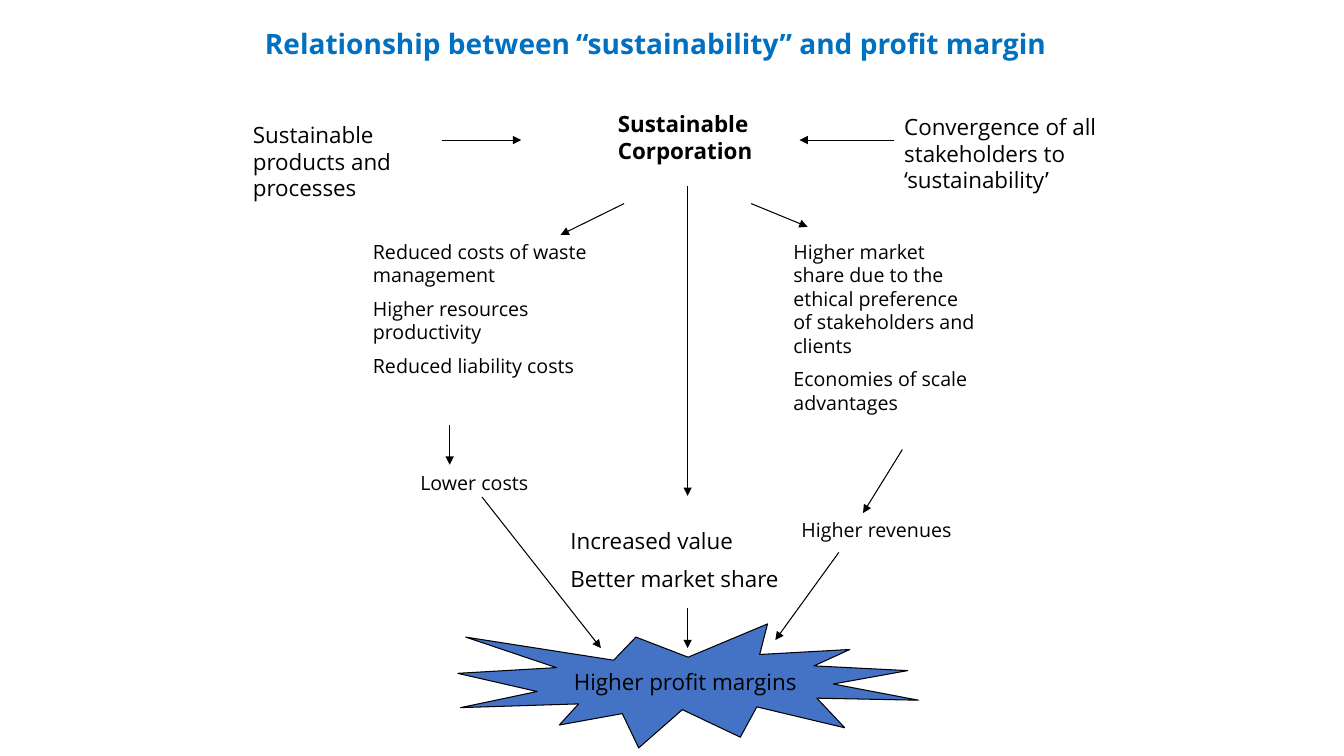
import pptx
import pptx.util
import pptx.dml.color
import pptx.enum.shapes
import pptx.enum.text
import pptx.oxml
import pptx.oxml.ns

Inches = pptx.util.Inches
Pt = pptx.util.Pt
RGBColor = pptx.dml.color.RGBColor

BLACK = RGBColor(0x00, 0x00, 0x00)
TITLE = RGBColor(0x00, 0x70, 0xC0)
BURST = RGBColor(0x44, 0x72, 0xC4)
FONT = "Open Sans"

deck = pptx.Presentation()
deck.slide_width = Inches(13.33)
deck.slide_height = Inches(7.5)
slide = deck.slides.add_slide(deck.slide_layouts[6])


def style(para, size, color=BLACK, bold=False):
    para.font.name = FONT
    para.font.size = Pt(size)
    para.font.color.rgb = color
    para.font.bold = bold


def add_text(left, top, width, height, size, lines, color=BLACK, bold=False):
    box = slide.shapes.add_textbox(
        Inches(left), Inches(top), Inches(width), Inches(height))
    frame = box.text_frame
    frame.word_wrap = True
    frame.text = "\n".join(lines)
    for para in frame.paragraphs:
        style(para, size, color, bold)
    for para in frame.paragraphs[1:]:
        para.space_before = Pt(size / 2)
    return frame


# Title, with a smaller space after its first words
title = add_text(2.53, 0.21, 9.33, 0.43, 20, ["Relationship between"], TITLE, True)
head = title.paragraphs[0]
gap = head.add_run()
gap.text = " "
gap.font.size = Pt(16)
gap.font.bold = False
head.add_run().text = "“sustainability” and profit margin"

# Text blocks: left, top, width, height, size, paragraphs
blocks = [
    (2.41, 1.15, 2.05, 0.91, 16, ["Sustainable products and processes"]),
    (8.87, 1.07, 2.6, 0.91, 16,
     ["Convergence of all stakeholders to ‘sustainability’"]),
    (3.6, 2.33, 2.6, 1.28, 14,
     ["Reduced costs of waste management",
      "Higher resources productivity",
      "Reduced liability costs"]),
    (7.77, 2.33, 2.05, 1.87, 14,
     ["Higher market share due to the ethical preference of "
      "stakeholders and clients",
      "Economies of scale advantages"]),
    (4.07, 4.62, 2.05, 0.34, 14, ["Lower costs"]),
    (7.85, 5.09, 2.05, 0.34, 14, ["Higher revenues"]),
    (5.56, 5.18, 2.52, 0.77, 16, ["Increased value", "Better market share"]),
]
for block in blocks:
    add_text(*block)
add_text(6.03, 1.04, 1.6, 0.64, 16, ["Sustainable Corporation"], bold=True)

# Arrows: start x, y, end x, y
arrows = [
    (4.38, 1.39, 5.17, 1.39),
    (8.87, 1.39, 7.93, 1.39),
    (6.82, 1.85, 6.82, 4.92),
    (6.19, 2.02, 5.56, 2.33),
    (7.45, 2.02, 8.01, 2.25),
    (4.46, 4.22, 4.46, 4.61),
    (8.95, 4.46, 8.56, 5.09),
    (4.78, 4.93, 5.96, 6.43),
    (8.32, 5.48, 7.69, 6.35),
    (6.82, 6.03, 6.82, 6.43),
]
for ends in arrows:
    arrow = slide.shapes.add_connector(
        pptx.enum.shapes.MSO_CONNECTOR.STRAIGHT, *[Inches(n) for n in ends])
    arrow.line.color.rgb = BLACK
    arrow.line.width = Pt(0.75)
    tip = pptx.oxml.parse_xml(
        "<a:tailEnd %s type='triangle'/>" % pptx.oxml.ns.nsdecls("a"))
    arrow.line._get_or_add_ln().append(tip)
    flat = pptx.oxml.parse_xml("<a:effectLst %s/>" % pptx.oxml.ns.nsdecls("a"))
    arrow._element.spPr.append(flat)

# Burst with the outcome
burst = slide.shapes.add_shape(
    pptx.enum.shapes.MSO_SHAPE.EXPLOSION1,
    Inches(4.54), Inches(6.19), Inches(4.57), Inches(1.23))
burst.shadow.inherit = False
burst.fill.solid()
burst.fill.fore_color.rgb = BURST
burst.line.color.rgb = BLACK
burst.line.width = Pt(0.75)
frame = burst.text_frame
frame.word_wrap = False
frame.vertical_anchor = pptx.enum.text.MSO_ANCHOR.MIDDLE
frame.text = "Higher profit margins"
goal = frame.paragraphs[0]
goal.alignment = pptx.enum.text.PP_ALIGN.CENTER
style(goal, 16)

deck.save("out.pptx")
